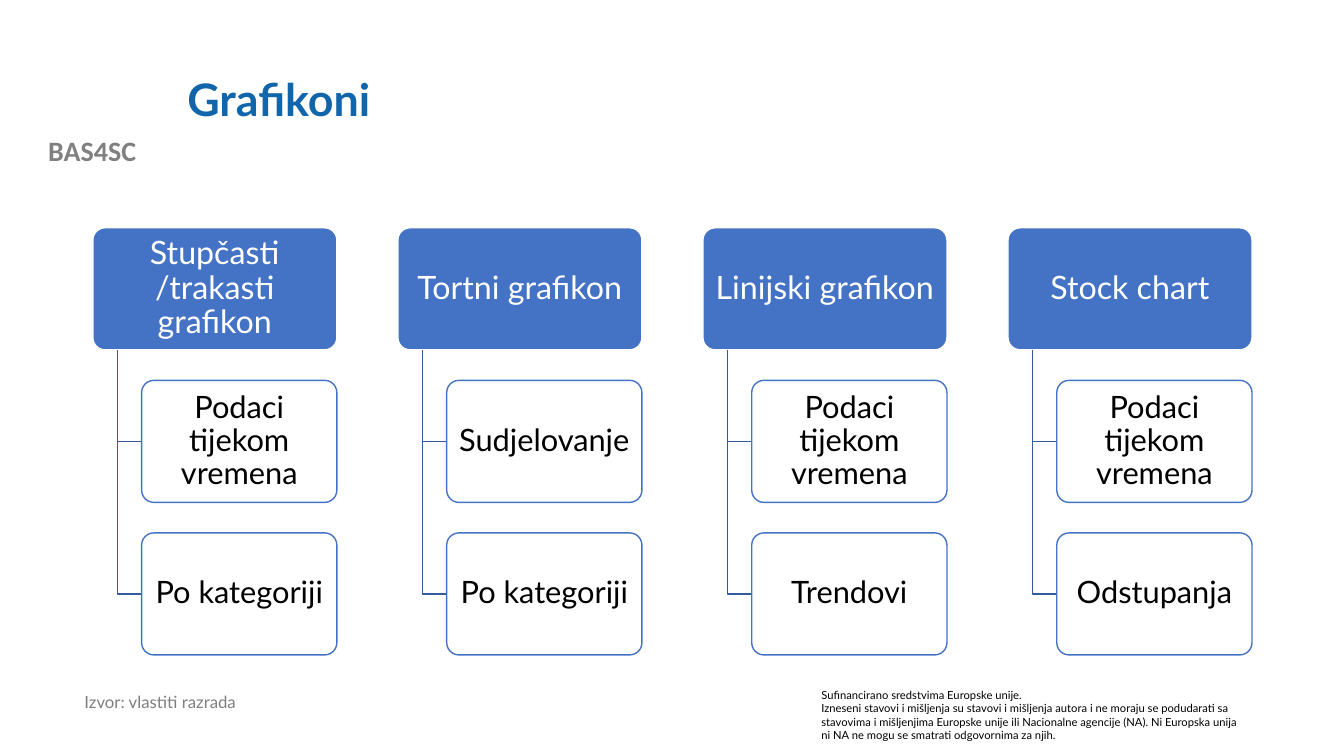
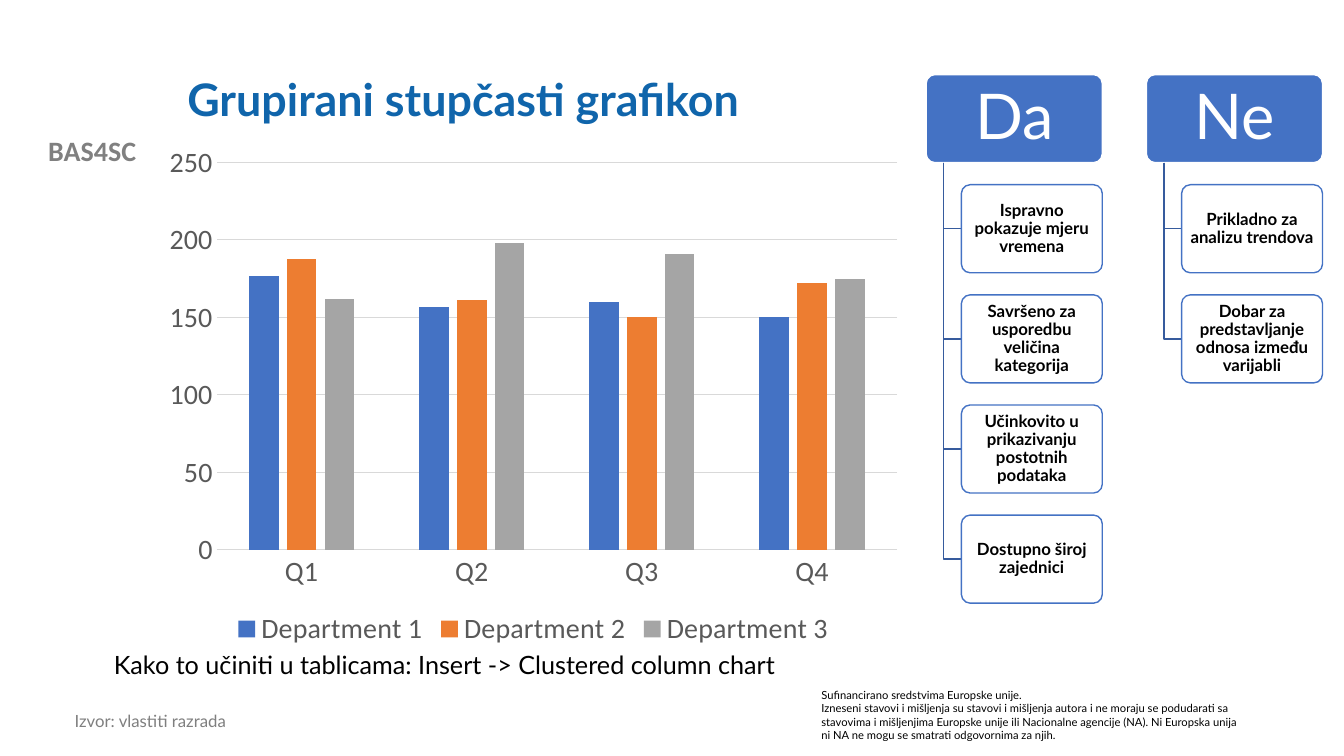
from dataclasses import dataclass
from typing import NamedTuple

from lxml.etree import SubElement
from pptx import Presentation
from pptx.chart.data import CategoryChartData as ChartData
from pptx.dml.color import RGBColor as Rgb
from pptx.enum.chart import XL_CHART_TYPE as Kind
from pptx.enum.chart import XL_LEGEND_POSITION as Place
from pptx.enum.chart import XL_TICK_MARK as Tick
from pptx.enum.shapes import MSO_SHAPE as Form
from pptx.enum.text import MSO_ANCHOR as Anchor
from pptx.enum.text import PP_ALIGN as Align
from pptx.oxml.ns import qn
from pptx.slide import Slide
from pptx.util import Cm, Pt


# Theme: colours, fonts and type sizes
@dataclass(frozen=True)
class Theme:
    title: str = "1065AB"
    blue: str = "4472C4"
    orange: str = "ED7D31"
    silver: str = "A5A5A5"
    branch: str = "365B9D"
    tag: str = "808080"
    source: str = "7F7F7F"
    label: str = "595959"
    grid: str = "D9D9D9"
    white: str = "FFFFFF"
    black: str = "000000"
    sans: str = "Lato"
    plain: str = "Calibri"
    big: float = 32
    mid: float = 20
    how: float = 18
    small: float = 12
    tiny: float = 8


T = Theme()


class Box(NamedTuple):
    left: float
    top: float
    width: float
    height: float


class Style(NamedTuple):
    size: float
    colour: str
    bold: bool = False
    font: str = T.sans
    align: Align = Align.LEFT
    lead: float = 1.0


class Tree(NamedTuple):
    head: str
    leaves: tuple[str, ...]


@dataclass(frozen=True)
class Grove:
    """A row of trees; every gap follows from the head width."""
    left: float
    top: float
    width: float
    head: Style
    leaf: Style
    head_pad: float
    leaf_pad: float
    trees: tuple[Tree, ...]


def tint(colour: str) -> Rgb:
    return Rgb.from_string(colour)


# Text
def fill_text(frame, style: Style, *lines: str) -> None:
    frame.word_wrap = True
    for i, line in enumerate(lines):
        para = frame.paragraphs[0] if i == 0 else frame.add_paragraph()
        para.alignment = style.align
        para.line_spacing = style.lead
        run = para.add_run()
        run.text = line
        font = run.font
        font.name, font.size, font.bold = style.font, Pt(style.size), style.bold
        font.color.rgb = tint(style.colour)


def add_text(slide: Slide, box: Box, style: Style, *lines: str,
             anchor: Anchor = Anchor.TOP) -> None:
    frame = slide.shapes.add_textbox(*map(Cm, box)).text_frame
    frame.vertical_anchor = anchor
    fill_text(frame, style, *lines)


# Trees
def add_node(slide: Slide, box: Box, style: Style, text: str, pad: float,
             fill: str, edge: str, alpha: int = 100) -> None:
    node = slide.shapes.add_shape(Form.ROUNDED_RECTANGLE, *map(Cm, box))
    node.adjustments[0] = 0.1
    node.shadow.inherit = False
    node.fill.solid()
    node.fill.fore_color.rgb = tint(fill)
    if alpha < 100:
        colour = node.fill._xPr.find(qn("a:solidFill"))[0]
        SubElement(colour, qn("a:alpha"), val=str(alpha * 1000))
    node.line.color.rgb = tint(edge)
    node.line.width = Pt(1)
    frame = node.text_frame
    frame.vertical_anchor = Anchor.MIDDLE
    frame.margin_left = frame.margin_right = Cm(pad)
    frame.margin_top = frame.margin_bottom = Cm(pad * 0.65)
    fill_text(frame, style, text)


def add_branch(slide: Slide, x: float, top: float, end: float, y: float) -> None:
    path = slide.shapes.build_freeform(Cm(x), Cm(top))
    path.add_line_segments([(Cm(x), Cm(y)), (Cm(end), Cm(y))], close=False)
    branch = path.convert_to_shape()
    branch.shadow.inherit = False
    branch.fill.background()
    branch.line.color.rgb = tint(T.branch)
    branch.line.width = Pt(1)


def add_grove(slide: Slide, grove: Grove) -> None:
    width, high = grove.width, grove.width / 2
    for col, tree in enumerate(grove.trees):
        left = grove.left + col * width * 1.25
        add_node(slide, Box(left, grove.top, width, high), grove.head,
                 tree.head, grove.head_pad, T.blue, T.white)
        inner = left + width * 0.2
        for row, leaf in enumerate(tree.leaves, 1):
            top = grove.top + row * high * 1.25
            add_branch(slide, left + width * 0.1, grove.top + high,
                       inner, top + high / 2)
            add_node(slide, Box(inner, top, width * 0.8, high), grove.leaf,
                     leaf, grove.leaf_pad, T.white, T.blue, 90)


# Chart
class Series(NamedTuple):
    name: str
    values: tuple[int, ...]
    colour: str


def set_font(font, colour: str) -> None:
    font.name, font.size, font.bold = T.plain, Pt(T.mid), False
    font.color.rgb = tint(colour)


def set_line(line, colour: str) -> None:
    line.color.rgb = tint(colour)
    line.width = Pt(0.75)


def add_columns(slide: Slide, box: Box, names: tuple[str, ...],
                rows: tuple[Series, ...]) -> None:
    data = ChartData()
    data.categories = names
    for row in rows:
        data.add_series(row.name, row.values)
    chart = slide.shapes.add_chart(
        Kind.COLUMN_CLUSTERED, *map(Cm, box), data).chart
    chart.has_title = False
    set_font(chart.font, T.black)
    chart.has_legend = True
    chart.legend.position = Place.BOTTOM
    chart.legend.include_in_layout = False
    set_font(chart.legend.font, T.label)
    plot = chart.plots[0]
    plot.vary_by_categories = False
    plot.gap_width, plot.overlap = 219, -27
    for series, row in zip(plot.series, rows):
        series.format.fill.solid()
        series.format.fill.fore_color.rgb = tint(row.colour)
    base, scale = chart.category_axis, chart.value_axis
    for axis in (base, scale):
        axis.major_tick_mark = axis.minor_tick_mark = Tick.NONE
        set_font(axis.tick_labels.font, T.label)
    set_line(base.format.line, T.grid)
    scale.format.line.fill.background()
    scale.minimum_scale, scale.maximum_scale, scale.major_unit = 0, 250, 50
    scale.has_major_gridlines = True
    set_line(scale.major_gridlines.format.line, T.grid)


# Shared frame: tag, funding note, title and source
def add_page(deck, title: str, source: Box) -> Slide:
    slide = deck.slides.add_slide(deck.slide_layouts[6])
    add_text(slide, Box(0, 3.25, 4.65, 1.12),
             Style(T.mid, T.tag, True, T.plain, Align.CENTER), "BAS4SC")
    add_text(slide, Box(20.45, 17.22, 11.1, 1.63), Style(T.tiny, T.black),
             "Sufinancirano sredstvima Europske unije.",
             "Izneseni stavovi i mišljenja su stavovi i mišljenja autora i ne "
             "moraju se podudarati sa stavovima i mišljenjima Europske unije "
             "ili Nacionalne agencije (NA). Ni Europska unija ni NA ne mogu "
             "se smatrati odgovornima za njih.")
    add_text(slide, Box(4.47, 1.02, 27.08, 3.1),
             Style(T.big, T.title, True, lead=0.9), title,
             anchor=Anchor.MIDDLE)
    add_text(slide, source, Style(T.small, T.source, lead=0.9),
             "Izvor: vlastiti razrada")
    return slide


def node_style(size: float, colour: str, bold: bool = False) -> Style:
    return Style(size, colour, bold, align=Align.CENTER, lead=0.9)


# Content
TIME, KIND = "Podaci tijekom vremena", "Po kategoriji"
CHARTS = Grove(
    2.34, 5.74, 6.15, node_style(23, T.white), node_style(22, T.black),
    0.12, 0.12, (
        Tree("Stupčasti /trakasti grafikon", (TIME, KIND)),
        Tree("Tortni grafikon", ("Sudjelovanje", KIND)),
        Tree("Linijski grafikon", (TIME, "Trendovi")),
        Tree("Stock chart", (TIME, "Odstupanja")),
    ))
USES = Grove(
    23.34, 1.88, 4.44, node_style(45, T.white),
    node_style(T.small, T.black, True), 0.23, 0.08, (
        Tree("Da", ("Ispravno pokazuje mjeru vremena",
                    "Savršeno za usporedbu veličina kategorija",
                    "Učinkovito u prikazivanju postotnih podataka",
                    "Dostupno široj zajednici")),
        Tree("Ne", ("Prikladno za analizu trendova",
                    "Dobar za predstavljanje odnosa između varijabli")),
    ))
SALES = (
    Series("Department 1", (177, 157, 160, 150), T.blue),
    Series("Department 2", (188, 161, 150, 172), T.orange),
    Series("Department 3", (162, 198, 191, 175), T.silver),
)


def main() -> None:
    deck = Presentation()
    deck.slide_width, deck.slide_height = Cm(33.87), Cm(19.05)

    # Chart types
    slide = add_page(deck, "Grafikoni", Box(1.88, 17.37, 12.73, 1.32))
    add_grove(slide, CHARTS)

    # Clustered columns
    slide = add_page(deck, "Grupirani stupčasti grafikon",
                     Box(1.63, 17.83, 12.73, 0.86))
    add_columns(slide, Box(3.89, 3.4, 19.1, 13.03),
                ("Q1", "Q2", "Q3", "Q4"), SALES)
    add_grove(slide, USES)
    add_text(slide, Box(2.62, 16.23, 20.02, 1.07), Style(T.how, T.black),
             "Kako to učiniti u tablicama: Insert -> Clustered column chart")

    deck.save("out.pptx")


if __name__ == "__main__":
    main()
